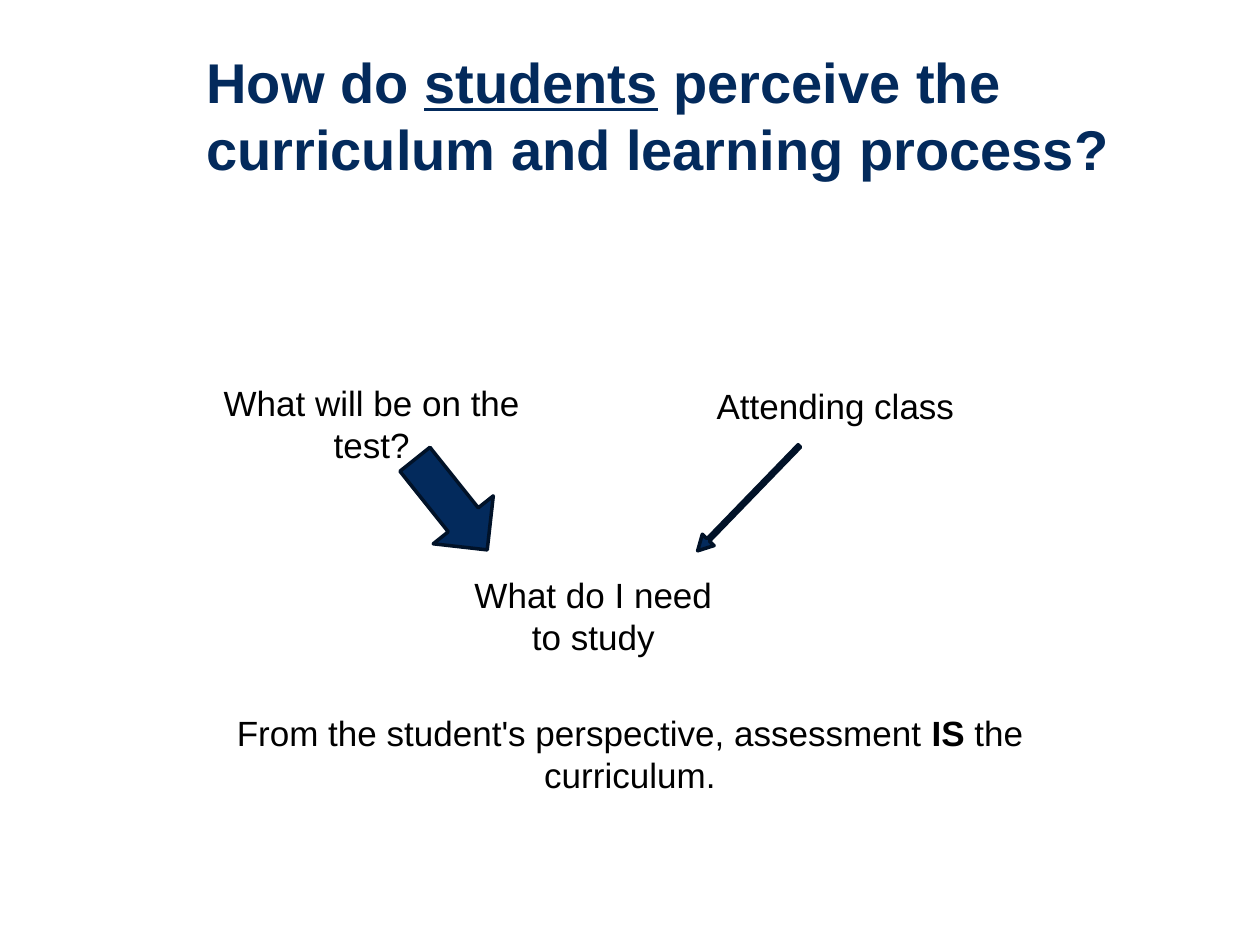
from pptx import Presentation
from pptx.dml.color import RGBColor
from pptx.enum.shapes import MSO_SHAPE as Shape
from pptx.enum.text import MSO_ANCHOR as Anchor, PP_ALIGN as Align
from pptx.util import Inches, Pt

COLORS = {"navy": "032A5C", "edge": "011228", "text": "000000"}

TITLE = [("How do ", ""), ("students", "u"),
         (" perceive the curriculum and learning process?", "")]
TITLE_AREA = (1.54, 0.32, 7.96, 1.18)

STATEMENTS = [
    ([("Attending class", "")], (5.22, 3, 2.82, 0.44)),
    ([("What will be on the test?", "")], (1.54, 2.98, 2.82, 0.44)),
    ([("What do I need to study", "")], (3.53, 4.5, 2.36, 0.77)),
    ([("From the student's perspective, assessment ", ""), ("IS", "b"),
      (" the curriculum.", "")], (1.31, 5.6, 7.38, 0.77)),
]

ARROWS = [
    ((3.12, 3.7, 0.92, 0.61), 51.4, (0.5, 0.5)),
    ((5.36, 3.89, 1.16, 0.13), 134.1, (0.21, 0.93)),
]


def color(name):
    return RGBColor.from_string(COLORS[name])


def add_text(slide, pieces, area, size=20, ink="text", bold=False,
             align=Align.CENTER, anchor=Anchor.TOP):
    frame = slide.shapes.add_textbox(*map(Inches, area)).text_frame
    frame.word_wrap = True
    frame.vertical_anchor = anchor
    paragraph = frame.paragraphs[0]
    paragraph.alignment = align
    for words, style in pieces:
        run = paragraph.add_run()
        run.text = words
        run.font.name = "Arial"
        run.font.size = Pt(size)
        run.font.color.rgb = color(ink)
        run.font.bold = bold or style == "b"
        run.font.underline = style == "u"


def add_arrow(slide, area, angle, adjustments):
    arrow = slide.shapes.add_shape(Shape.RIGHT_ARROW, *map(Inches, area))
    arrow.rotation = angle
    for index, value in enumerate(adjustments):
        arrow.adjustments[index] = value
    arrow.shadow.inherit = False
    arrow.fill.solid()
    arrow.fill.fore_color.rgb = color("navy")
    arrow.line.color.rgb = color("edge")
    arrow.line.width = Pt(2)


def main():
    deck = Presentation()
    deck.slide_width, deck.slide_height = Inches(10), Inches(7.5)
    slide = deck.slides.add_slide(deck.slide_layouts[6])
    add_text(slide, TITLE, TITLE_AREA, size=32, ink="navy", bold=True,
             align=Align.LEFT, anchor=Anchor.MIDDLE)
    for pieces, area in STATEMENTS:
        add_text(slide, pieces, area)
    for area, angle, adjustments in ARROWS:
        add_arrow(slide, area, angle, adjustments)
    deck.save("out.pptx")


if __name__ == "__main__":
    main()
